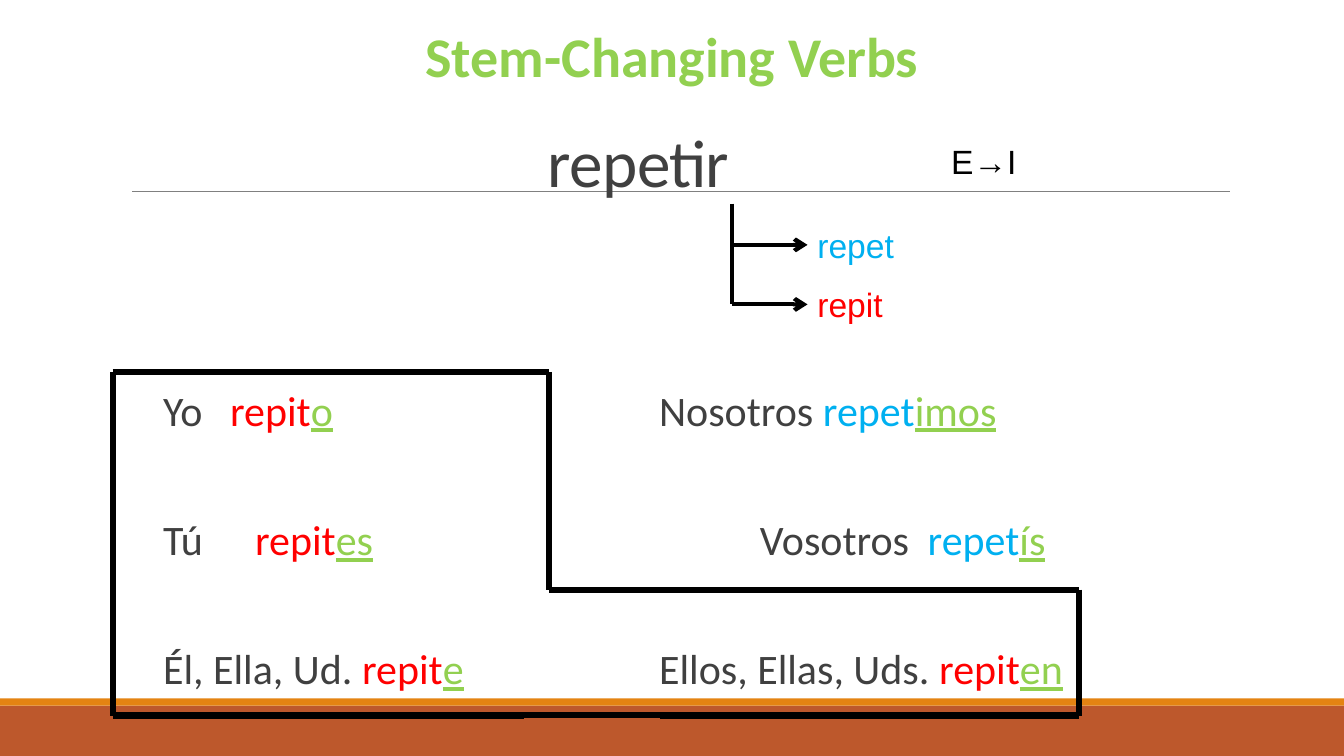
from lxml.etree import SubElement
from pptx import Presentation
from pptx.dml.color import RGBColor
from pptx.enum.shapes import MSO_CONNECTOR, MSO_SHAPE
from pptx.enum.text import MSO_ANCHOR, PP_ALIGN
from pptx.oxml.ns import qn
from pptx.util import Cm, Pt

BLACK = RGBColor(0, 0, 0)
GRAY = RGBColor(0x80, 0x80, 0x80)
DARK = RGBColor(0x40, 0x40, 0x40)
RED = RGBColor(0xFF, 0, 0)
BLUE = RGBColor(0, 0xB0, 0xF0)
GREEN = RGBColor(0x92, 0xD0, 0x50)
RUST = RGBColor(0xBD, 0x58, 0x2C)
ORANGE = RGBColor(0xE4, 0x83, 0x12)


def add_line(x1, y1, x2, y2, color, width, arrow=False):
    c = s.shapes.add_connector(MSO_CONNECTOR.STRAIGHT, Cm(x1), Cm(y1), Cm(x2), Cm(y2))
    c.line.color.rgb = color
    c.line.width = Pt(width)
    if arrow:
        SubElement(c.line._get_or_add_ln(), qn("a:tailEnd"), type="arrow")
    SubElement(c._element.spPr, qn("a:effectLst"))


def add_text(text, x, y, w, h, size, font, color):
    tf = s.shapes.add_textbox(Cm(x), Cm(y), Cm(w), Cm(h)).text_frame
    tf.word_wrap = True
    tf.text = text
    f = tf.paragraphs[0].runs[0].font
    f.size, f.name = Pt(size), font
    f.color.rgb = color
    return tf


prs = Presentation()
prs.slide_width, prs.slide_height = Cm(33.87), Cm(19.05)
s = prs.slides.add_slide(prs.slide_layouts[6])

for top, height, color in [(17.78, 1.27, RUST), (17.6, 0.18, ORANGE)]:
    sp = s.shapes.add_shape(MSO_SHAPE.RECTANGLE, 0, Cm(top), prs.slide_width, Cm(height))
    sp.shadow.inherit = False
    sp.fill.solid()
    sp.fill.fore_color.rgb = color
    sp.line.fill.background()
add_line(3.33, 4.83, 31, 4.83, GRAY, 0.5)

tf = add_text("repetir", 13.56, 2.79, 9.73, 2.41, 48, "Calibri", DARK)
tf.vertical_anchor = MSO_ANCHOR.BOTTOM
p = tf.paragraphs[0]
p.line_spacing = 0.85
p.runs[0].font._element.set("spc", "-50")

conjugation = [
    ([1.69, 12.5], [("Yo\t", "repit", "o", RED), ("\tNosotros ", "repet", "imos", BLUE)]),
    ([2.32, 15.04, 19.27], [("Tú\t", "repit", "es", RED), ("\tVosotros\t", "repet", "ís", BLUE)]),
    ([12.5], [("Él, Ella, Ud. ", "repit", "e", RED), ("\tEllos, Ellas, Uds. ", "repit", "en", RED)]),
]
tf = s.shapes.add_textbox(Cm(4.11), Cm(9.7), Cm(25), Cm(9)).text_frame
tf.word_wrap = True
tf.margin_left = tf.margin_right = 0
for i, (stops, forms) in enumerate(conjugation):
    p = tf.paragraphs[0] if i == 0 else tf.add_paragraph()
    p.line_spacing = 0.9
    p.space_after = Pt(60)
    tabs = SubElement(p._p.get_or_add_pPr(), qn("a:tabLst"))
    for stop in stops:
        SubElement(tabs, qn("a:tab"), pos=str(int(Cm(stop))), algn="l")
    for pronoun, stem, ending, stem_color in forms:
        for text, color in [(pronoun, DARK), (stem, stem_color), (ending, GREEN)]:
            r = p.add_run()
            r.text = text
            r.font.size, r.font.name = Pt(30), "Calibri"
            r.font.color.rgb = color
            r.font.underline = color == GREEN

add_line(18.44, 5.13, 18.44, 7.67, BLACK, 3)
for y in (7.67, 6.17):
    add_line(18.44, y, 20.35, y, BLACK, 3, arrow=True)
add_text("repet", 20.35, 5.54, 6.35, 1.3, 24, "Arial", BLUE)
add_text("repit", 20.35, 7.04, 2.5, 1.3, 24, "Arial", RED)

boot_outline = [
    (2.84, 9.37, 13.84, 9.37),
    (13.84, 9.37, 13.84, 14.86),
    (13.84, 14.86, 27.2, 14.86),
    (2.84, 18.03, 13.21, 18.03),
    (13.21, 18.01, 24, 18.01),
    (16.64, 18.03, 27.2, 18.03),
    (27.2, 14.86, 27.2, 18.03),
    (2.84, 9.37, 2.84, 18.03),
]
for ends in boot_outline:
    add_line(*ends, BLACK, 4.5)

add_text("E→I", 23.72, 3.43, 3.81, 1.3, 24, "Arial", BLACK)
p = add_text("Stem-Changing Verbs", 5.72, 0.43, 22.43, 1.96, 40, "Calibri", GREEN).paragraphs[0]
p.alignment = PP_ALIGN.CENTER
p.runs[0].font.bold = True

prs.save("out.pptx")
